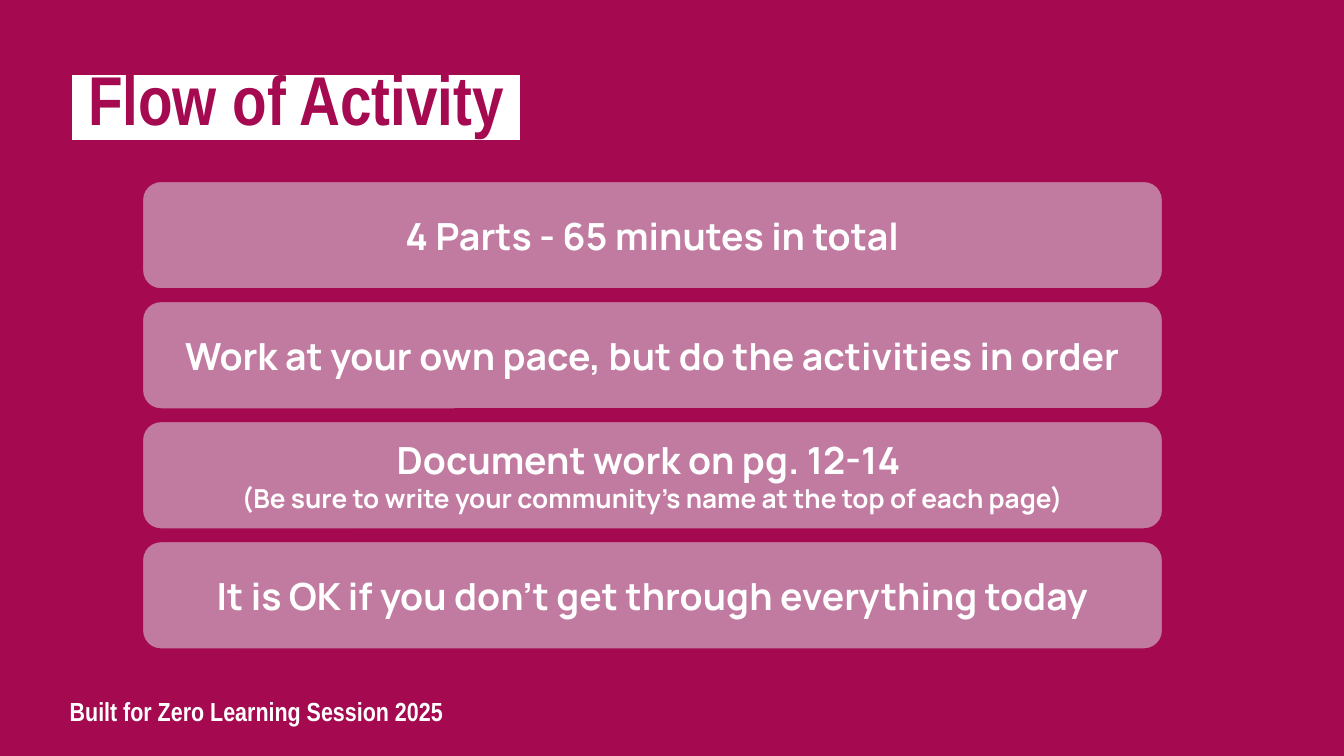
"""Build the Flow of Activity slide."""
from dataclasses import dataclass

from lxml.etree import SubElement
from pptx import Presentation
from pptx.dml.color import RGBColor
from pptx.enum.shapes import MSO_SHAPE
from pptx.enum.text import MSO_ANCHOR, PP_ALIGN
from pptx.oxml.ns import qn
from pptx.shapes.autoshape import Shape
from pptx.slide import Slide
from pptx.text.text import _Run
from pptx.util import Inches, Pt


@dataclass(frozen=True)
class Theme:
    """Colours, fonts and type sizes of the slide."""
    crimson: RGBColor = RGBColor(0xA5, 0x0A, 0x51)
    mauve: RGBColor = RGBColor(0xC2, 0x7B, 0xA0)
    white: RGBColor = RGBColor(0xFF, 0xFF, 0xFF)
    heading_font: str = "Arial Narrow"
    body_font: str = "Manrope"
    title_size: int = 37
    step_size: int = 20
    note_size: int = 14


@dataclass(frozen=True)
class Area:
    """A place on the page, in inches."""
    left: float
    top: float
    width: float
    height: float

    def lengths(self) -> list[Inches]:
        """Return left, top, width and height as lengths."""
        return [Inches(value) for value in (self.left, self.top, self.width, self.height)]


@dataclass(frozen=True)
class Line:
    """One paragraph of text with its look."""
    text: str
    size: int
    font: str
    colour: RGBColor
    highlight: RGBColor | None = None
    spacing: float = 1.0


THEME = Theme()
FIRST_TOP, LAST_TOP = 1.35, 4.03
STEPS = [
    ["4 Parts - 65 minutes in total"],
    ["Work at your own pace, but do the activities in order"],
    ["Document work on pg. 12-14 ",
     "(Be sure to write your community’s name at the top of each page)"],
    ["It is OK if you don’t get through everything today"],
]


def highlight_span(span: _Run, colour: RGBColor) -> None:
    """Put a colour behind a span, right after its text fill."""
    properties = span.font._element
    highlight = SubElement(properties, qn("a:highlight"))
    SubElement(highlight, qn("a:srgbClr")).set("val", str(colour))
    properties.find(qn("a:solidFill")).addnext(highlight)


def write_lines(box: Shape, lines: list[Line], alignment: PP_ALIGN = PP_ALIGN.LEFT,
                **frame_format: object) -> None:
    """Fill a box with bold paragraphs."""
    frame = box.text_frame
    margins = {f"margin_{side}": Inches(0.1) for side in ("left", "top", "right", "bottom")}
    settings = {"word_wrap": True, "vertical_anchor": MSO_ANCHOR.MIDDLE}
    for name, value in (margins | settings | frame_format).items():
        setattr(frame, name, value)
    for index, line in enumerate(lines):
        paragraph = frame.add_paragraph() if index else frame.paragraphs[0]
        paragraph.alignment = alignment
        paragraph.line_spacing = line.spacing
        span = paragraph.add_run()
        span.text = line.text
        for name, value in {"name": line.font, "size": Pt(line.size), "bold": True}.items():
            setattr(span.font, name, value)
        span.font.color.rgb = line.colour
        if line.highlight is not None:
            highlight_span(span, line.highlight)


def draw_step(page: Slide, top: float, texts: list[str]) -> None:
    """Draw one rounded step, its second paragraph smaller."""
    panel = page.shapes.add_shape(MSO_SHAPE.ROUNDED_RECTANGLE,
                                  *Area(1.06, top, 7.59, 0.8).lengths())
    panel.shadow.inherit = False
    panel.adjustments[0] = 0.17
    panel.fill.solid()
    panel.fill.fore_color.rgb = THEME.mauve
    panel.line.color.rgb = THEME.crimson
    panel.line.width = Pt(0.75)
    sizes = (THEME.step_size, THEME.note_size)
    lines = [Line(text, size, THEME.body_font, THEME.white) for text, size in zip(texts, sizes)]
    write_lines(panel, lines, PP_ALIGN.CENTER)


def draw_heading(page: Slide, area: Area, line: Line, **frame_format: object) -> None:
    """Place a line of heading text."""
    write_lines(page.shapes.add_textbox(*area.lengths()), [line], **frame_format)


def main() -> None:
    """Build and save the deck."""
    deck = Presentation()
    deck.slide_width, deck.slide_height = Inches(10), Inches(10 * 9 / 16)
    page = deck.slides.add_slide(deck.slide_layouts[6])
    page.background.fill.solid()
    page.background.fill.fore_color.rgb = THEME.crimson

    draw_heading(page, Area(0.42, 5.02, 4.81, 0.54),
                 Line("Built for Zero Learning Session 2025", THEME.note_size,
                      THEME.heading_font, THEME.white))
    draw_heading(page, Area(0.44, 0.3, 9.12, 0.69),
                 Line(" Flow of Activity ", THEME.title_size, THEME.heading_font,
                      THEME.crimson, highlight=THEME.white, spacing=0.8),
                 vertical_anchor=MSO_ANCHOR.TOP, margin_top=Inches(0.24), margin_bottom=0)

    pitch = (LAST_TOP - FIRST_TOP) / (len(STEPS) - 1)
    for index, texts in enumerate(STEPS):
        draw_step(page, FIRST_TOP + index * pitch, texts)
    deck.save("out.pptx")


if __name__ == "__main__":
    main()
